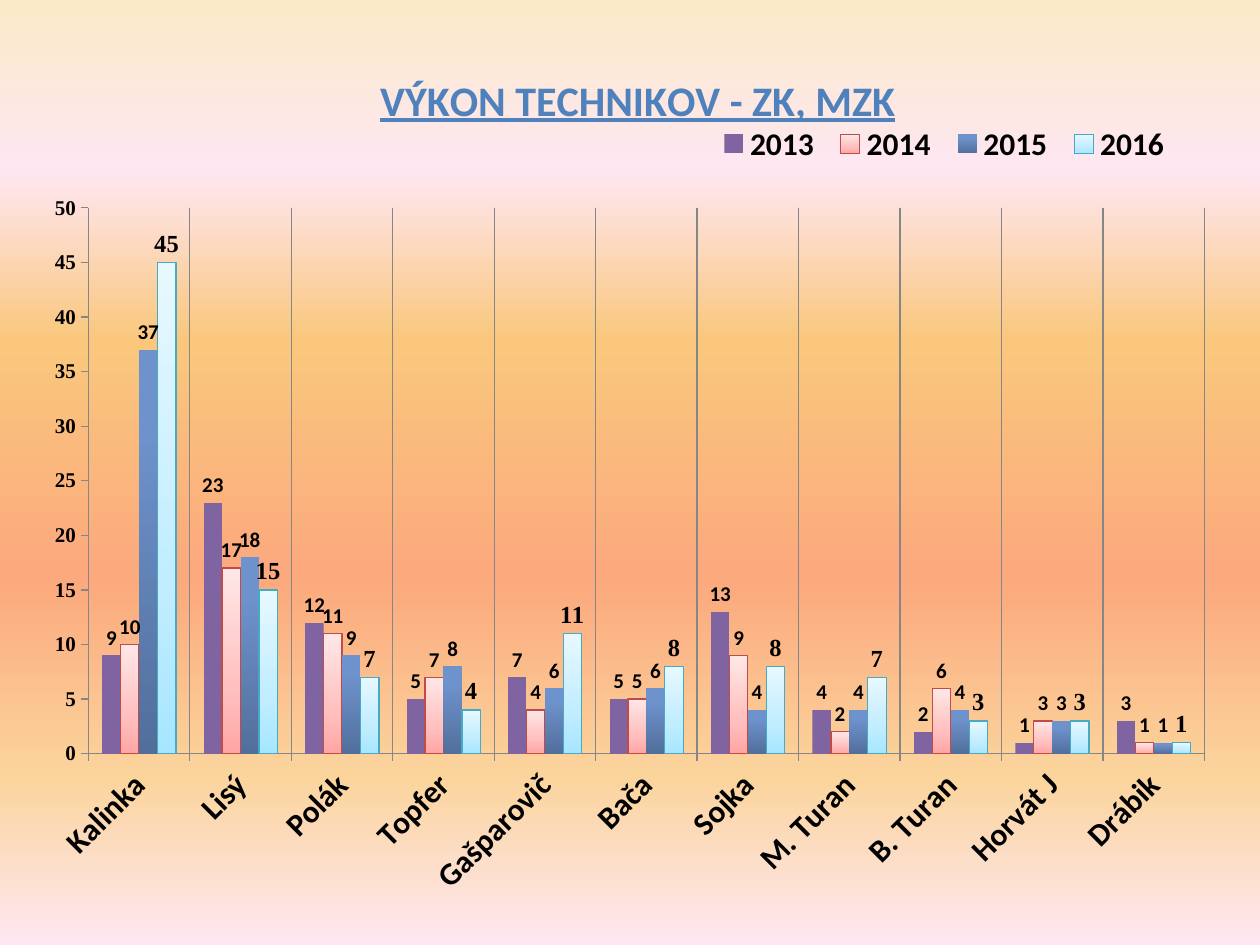
from lxml.etree import SubElement
from pptx import Presentation
from pptx.chart.data import CategoryChartData
from pptx.dml.color import RGBColor
from pptx.enum.chart import XL_CHART_TYPE, XL_LABEL_POSITION, XL_LEGEND_POSITION, XL_TICK_MARK
from pptx.oxml import parse_xml
from pptx.oxml.ns import nsdecls, qn
from pptx.util import Inches, Pt

# Content
TITLE = "VÝKON TECHNIKOV - ZK, MZK"
NAMES = ["Kalinka", "Lisý", "Polák", "Topfer", "Gašparovič", "Bača",
         "Sojka", "M. Turan", "B. Turan", "Horvát J", "Drábik"]
YEARS = {
    "2013": [9, 23, 12, 5, 7, 5, 13, 4, 2, 1, 3],
    "2014": [10, 17, 11, 7, 4, 5, 9, 2, 6, 3, 1],
    "2015": [37, 18, 9, 8, 6, 6, 4, 4, 4, 3, 1],
    "2016": [45, 15, 7, 4, 11, 8, 8, 7, 3, 3, 1],
}

# Style: gradient stops, line, label size, label font
SANS, SERIF = "Calibri", "Times New Roman"
BACK = [(0, "FBEAC7"), (18, "FEE7F2"), (36, "FAC77D"),
        (61, "FBA97D"), (82, "FBD49C"), (100, "FEE7F2")]
LOOKS = {
    "2013": ([(0, "8064A2"), (100, "8064A2")], None, 12, SANS),
    "2014": ([(0, "FFA6A5"), (35, "FFC0BF"), (100, "FFE7E7")], "BF4C48", 12, SANS),
    "2015": ([(0, "526F9C"), (80, "6E92CC"), (100, "7094CF")], None, 12, SANS),
    "2016": ([(0, "A7E6FF"), (35, "C1EDFF"), (100, "E7F8FF")], "46AAC5", 14, SERIF),
}
GREY = "868686"


def tint(code):
    return RGBColor.from_string(code)


def style(font, size, name=SANS, color="000000"):
    font.size, font.bold, font.name = Pt(size), True, name
    font.color.rgb = tint(color)


def blend(fill, root, stops, angle):
    """Swap the solid fill under root for a linear gradient."""
    fill.solid()
    old = next(root.iter(qn("a:solidFill")))
    marks = "".join(f'<a:gs pos="{pos * 1000}"><a:srgbClr val="{code}"/></a:gs>'
                    for pos, code in stops)
    old.getparent().replace(old, parse_xml(
        f'<a:gradFill {nsdecls("a")} rotWithShape="1"><a:gsLst>{marks}</a:gsLst>'
        f'<a:lin ang="{angle * 60000}" scaled="0"/></a:gradFill>'))


def place(part, index, **shares):
    """Position a chart part by shares of the chart's size."""
    for old in part.findall(qn("c:layout")):
        part.remove(old)
    layout = parse_xml(f'<c:layout {nsdecls("c")}/>')
    box = SubElement(layout, qn("c:manualLayout"))
    if index == 0:
        SubElement(box, qn("c:layoutTarget")).set("val", "inner")
    for key in "xy":
        SubElement(box, qn(f"c:{key}Mode")).set("val", "edge")
    for key, share in shares.items():
        SubElement(box, qn(f"c:{key}")).set("val", str(share))
    part.insert(index, layout)


# Slide
deck = Presentation()
deck.slide_width, deck.slide_height = Inches(10), Inches(7.5)
slide = deck.slides.add_slide(deck.slide_layouts[6])
blend(slide.background.fill, slide.background._cSld, BACK, 90)

# Chart
data = CategoryChartData()
data.categories = NAMES
for year, values in YEARS.items():
    data.add_series(year, values)
edge = Inches(0.25)
chart = slide.shapes.add_chart(
    XL_CHART_TYPE.COLUMN_CLUSTERED, edge, edge,
    deck.slide_width - 2 * edge, deck.slide_height - 2 * edge, data).chart
chart.font.name, chart.font.size = SANS, Pt(10)
chart.font.color.rgb = tint("000000")
place(chart._chartSpace.chart.plotArea, 0, x=0.0475, y=0.2, w=0.9325, h=0.619)

# Title
chart.has_title = True
head = chart.chart_title
head.text_frame.text = TITLE
font = head.text_frame.paragraphs[0].runs[0].font
style(font, 24, color="4F81BD")
font.underline = True
head.include_in_layout = False
place(head._element, 1, x=0.285, y=0.037)

# Legend
chart.has_legend = True
legend = chart.legend
legend.position = XL_LEGEND_POSITION.TOP
legend.include_in_layout = False
style(legend.font, 18)
place(legend._element, 1, x=0.565, y=0.105, w=0.395, h=0.045)

# Axes
names, scale = chart.category_axis, chart.value_axis
names.has_major_gridlines, scale.has_major_gridlines = True, False
scale.minimum_scale, scale.maximum_scale, scale.major_unit = 0, 50, 5
style(names.tick_labels.font, 18)
style(scale.tick_labels.font, 12, SERIF)
names._element.find(qn("c:txPr")).find(qn("a:bodyPr")).set("rot", "-2700000")
for axis in (names, scale):
    axis.major_tick_mark = XL_TICK_MARK.OUTSIDE
    axis.minor_tick_mark = XL_TICK_MARK.NONE
for line in (names.format.line, scale.format.line, names.major_gridlines.format.line):
    line.color.rgb, line.width = tint(GREY), Pt(0.75)

# Columns
plot = chart.plots[0]
plot.gap_width, plot.overlap, plot.vary_by_categories = 150, 0, False
for bars in plot.series:
    stops, rim, size, face = LOOKS[bars.name]
    blend(bars.format.fill, bars._element, stops, 270)
    if rim:
        bars.format.line.color.rgb, bars.format.line.width = tint(rim), Pt(0.75)
    else:
        bars.format.line.fill.background()
    bars.invert_if_negative = False
    labels = bars.data_labels
    labels.show_value = True
    labels.position = XL_LABEL_POSITION.OUTSIDE_END
    style(labels.font, size, face)

deck.save("out.pptx")
